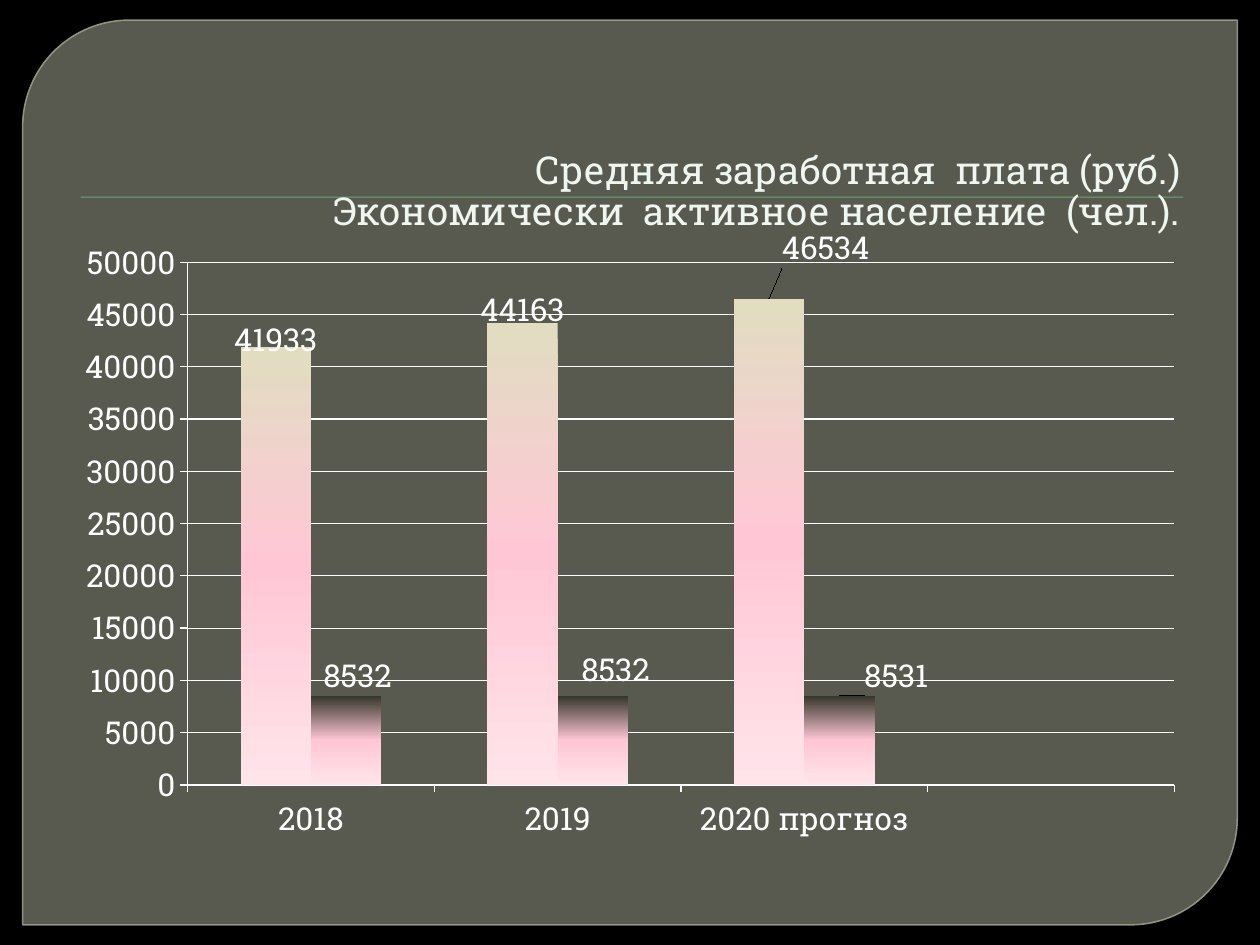
import copy
import pptx
import pptx.chart.data
import pptx.dml.color
import pptx.enum.chart
import pptx.enum.shapes
import pptx.enum.text
import pptx.oxml
import pptx.oxml.ns
import pptx.util
from dataclasses import dataclass

Inches = pptx.util.Inches
Pt = pptx.util.Pt
qn = pptx.oxml.ns.qn


@dataclass(frozen=True)
class Theme:
    """Colours, font and type sizes of the slide."""
    back: str = "000000"
    panel: str = "888B7B"
    edge: str = "9DA090"
    rule: str = "72A376"
    title: str = "EFF5EF"
    text: str = "FFFFFF"
    wage: tuple = ("E2DCC1", "FFC7D6", "FFE4EA")
    people: tuple = ("34352A", "FFC7D6", "FFE4EA")
    font: str = "Roboto Slab"
    head: int = 22
    body: int = 18


THEME = Theme()
YEARS = ["2018", "2019", "2020 прогноз", ""]
SERIES = [
    ("Series 1", [41933, 44163, 46534, None], THEME.wage,
     [(0, 0.03), (0, 0.02), (0.05, -0.04)]),
    ("Series 2", [8532, 8532, 8531, None], THEME.people,
     [(0.01, 0.01), (0.02, 0), (0.05, 0.01)]),
]


def rgb(code):
    """Turn a hex code into a colour."""
    return pptx.dml.color.RGBColor.from_string(code)


def apply(item, form):
    """Set each attribute named in a dict."""
    for name, value in form.items():
        setattr(item, name, value)


def style(font, size, color):
    """Set the theme font with a size and a colour."""
    apply(font, {"name": THEME.font, "size": Pt(size)})
    font.color.rgb = rgb(color)


def fade(fill, share):
    """Make a solid fill partly clear."""
    tone = fill._xPr.find(".//" + qn("a:srgbClr"))
    tone.append(pptx.oxml.parse_xml(
        f'<a:alpha {pptx.oxml.ns.nsdecls("a")} val="{share * 1000}"/>'))


def layout(spots, inner=False):
    """Build a manual chart layout from fractions."""
    mode = '<c:layoutTarget val="inner"/>' if inner else ""
    if inner:
        mode += '<c:xMode val="edge"/><c:yMode val="edge"/>'
    tags = "".join(f'<c:{key} val="{val}"/>' for key, val in spots.items())
    return pptx.oxml.parse_xml(
        f'<c:layout {pptx.oxml.ns.nsdecls("c")}><c:manualLayout>'
        f'{mode}{tags}</c:manualLayout></c:layout>')


def add_panel(slide, box):
    """Draw the rounded panel in its box."""
    kind = pptx.enum.shapes.MSO_SHAPE.ROUND_2_DIAG_RECTANGLE
    panel = slide.shapes.add_shape(kind, *map(Inches, box))
    panel.shadow.inherit = False
    panel.adjustments[0], panel.adjustments[1] = 0.118, 0
    panel.fill.solid()
    panel.fill.fore_color.rgb = rgb(THEME.panel)
    fade(panel.fill, 65)
    panel.line.color.rgb = rgb(THEME.edge)
    panel.line.width = Pt(0.87)
    fade(panel.line.fill, 88)


def add_rule(slide, box):
    """Draw the thin bar across the panel."""
    kind = pptx.enum.shapes.MSO_SHAPE.RECTANGLE
    rule = slide.shapes.add_shape(kind, *map(Inches, box))
    rule.shadow.inherit = False
    rule.fill.solid()
    rule.fill.fore_color.rgb = rgb(THEME.rule)
    rule.line.fill.background()


def add_title(slide, box):
    """Place the two-line title above the panel and rule."""
    title = slide.shapes.title
    slide.shapes._spTree.append(title._element)
    apply(title, dict(zip(("left", "top", "width", "height"),
                          map(Inches, box))))
    frame = title.text_frame
    frame.text = ("Средняя заработная  плата (руб.)\v"
                  "Экономически  активное население  (чел.).")
    apply(frame, {"word_wrap": True, "margin_bottom": Inches(0.49),
                  "auto_size": pptx.enum.text.MSO_AUTO_SIZE.NONE,
                  "vertical_anchor": pptx.enum.text.MSO_ANCHOR.BOTTOM})
    para = frame.paragraphs[0]
    apply(para, {"alignment": pptx.enum.text.PP_ALIGN.RIGHT,
                 "line_spacing": 0.9})
    for run in para.runs:
        style(run.font, THEME.head, THEME.title)


def paint(bars, tones):
    """Fill a series with a three-stop gradient from top to bottom."""
    fill = bars.format.fill
    fill.gradient()
    fill.gradient_angle = 270
    stops = bars._element.find(".//" + qn("a:gsLst"))
    stops.insert(1, copy.deepcopy(stops[0]))
    for step, (stop, tone) in enumerate(zip(fill.gradient_stops, tones)):
        stop.position = step / 2
        stop.color.rgb = rgb(tone)


def label(bars, shifts):
    """Show the values of a series and shift each label."""
    end = pptx.enum.chart.XL_LABEL_POSITION.OUTSIDE_END
    marks = bars.data_labels
    apply(marks, {"show_value": True, "position": end})
    style(marks.font, THEME.body, THEME.text)
    for spot, (x, y) in enumerate(shifts):
        mark = bars.points[spot].data_label
        style(mark.font, THEME.body, THEME.text)
        mark.position = end
        node = marks._element.findall(qn("c:dLbl"))[spot]
        node.insert(1, layout({"x": x, "y": y}))


def add_bars(slide, box):
    """Place the column chart of wages and workers."""
    data = pptx.chart.data.CategoryChartData()
    data.categories = YEARS
    for name, vals, _, _ in SERIES:
        data.add_series(name, vals)
    kind = pptx.enum.chart.XL_CHART_TYPE.COLUMN_CLUSTERED
    chart = slide.shapes.add_chart(kind, *map(Inches, box), data).chart
    apply(chart, {"has_legend": False, "has_title": False})
    style(chart.font, THEME.body, THEME.text)
    plot = chart.plots[0]
    apply(plot, {"gap_width": 150, "overlap": 0, "vary_by_categories": False})
    for bars, (_, _, tones, shifts) in zip(plot.series, SERIES):
        paint(bars, tones)
        label(bars, shifts)
    scale = chart.value_axis
    apply(scale, {"minimum_scale": 0, "maximum_scale": 50000,
                  "major_unit": 5000, "has_major_gridlines": True})
    for axis in (scale, chart.category_axis):
        axis.major_tick_mark = pptx.enum.chart.XL_TICK_MARK.OUTSIDE
        style(axis.tick_labels.font, THEME.body, THEME.text)
    for part in (scale, chart.category_axis, scale.major_gridlines):
        part.format.line.color.rgb = rgb(THEME.text)
        part.format.line.width = Pt(0.75)
    area = chart._chartSpace.find(".//" + qn("c:plotArea"))
    for old in area.findall(qn("c:layout")):
        area.remove(old)
    area.insert(0, layout({"x": 0.11, "y": 0.055, "w": 0.87, "h": 0.84}, True))


def main():
    """Build and save the slide."""
    deck = pptx.Presentation()
    apply(deck, {"slide_width": Inches(10), "slide_height": Inches(7.5)})
    slide = deck.slides.add_slide(deck.slide_layouts[5])
    slide.background.fill.solid()
    slide.background.fill.fore_color.rgb = rgb(THEME.back)
    add_panel(slide, (0.18, 0.16, 9.64, 7.18))
    add_rule(slide, (0.64, 1.56, 8.75, 0.01))
    add_title(slide, (0.47, 0.23, 9, 2.12))
    add_bars(slide, (0.5, 1.8, 9, 4.95))
    deck.save("out.pptx")


if __name__ == "__main__":
    main()
